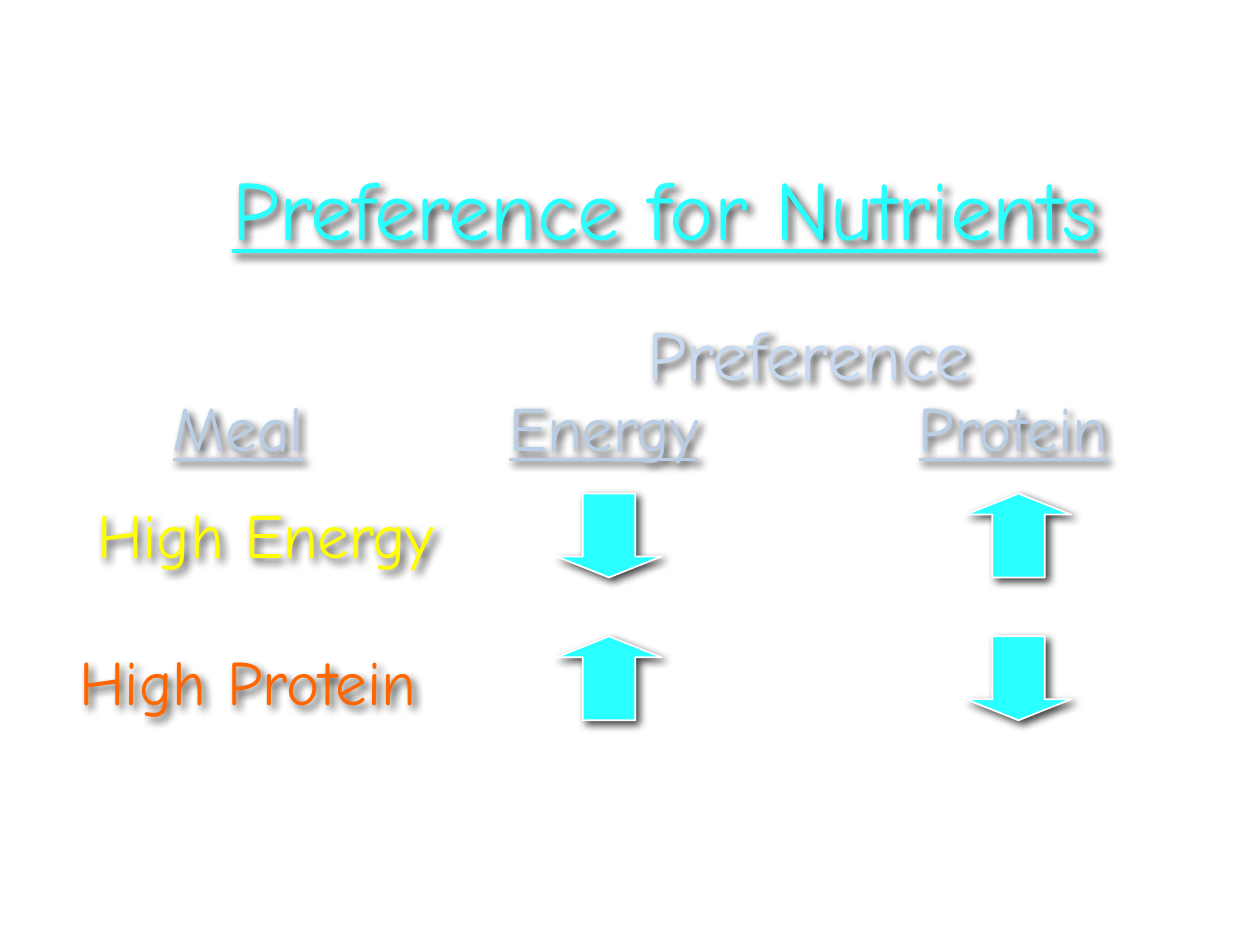
from lxml import etree
from pptx import Presentation
from pptx.dml.color import RGBColor
from pptx.enum.shapes import MSO_SHAPE
from pptx.enum.text import MSO_ANCHOR, MSO_AUTO_SIZE, PP_ALIGN
from pptx.oxml.ns import qn
from pptx.util import Emu, Pt

DOWN_ARROW = MSO_SHAPE.DOWN_ARROW
MIDDLE = MSO_ANCHOR.MIDDLE
FIT_SHAPE = MSO_AUTO_SIZE.SHAPE_TO_FIT_TEXT
NO_FIT = MSO_AUTO_SIZE.NONE
CENTER = PP_ALIGN.CENTER

SCALE = 7620
FONT = "Comic Neue"
COLORS = {
    "cyan": "29FFFF",
    "pale": "C6D9F1",
    "header": "B9CDE5",
    "yellow": "FFFF00",
    "orange": "FF6600",
    "white": "FFFFFF",
    "black": "000000",
}


def px(length):
    """Turn px (120 to the inch) into EMU."""
    return Emu(length * SCALE)


def color(name):
    """Return the named colour."""
    return RGBColor.from_string(COLORS[name])


def add_shadow(shape):
    """Give a shape a soft shadow to the lower right."""
    shape.shadow.inherit = False
    effects = shape._element.spPr.find(qn("a:effectLst"))
    shadow = etree.SubElement(
        effects, qn("a:outerShdw"), blurRad=str(Pt(5)), dist=str(Pt(3)),
        dir="2700000", algn="ctr", rotWithShape="0")
    black = etree.SubElement(shadow, qn("a:srgbClr"), val=COLORS["black"])
    etree.SubElement(black, qn("a:alpha"), val="75000")


def format_run(run, size, color_name, underline=False):
    """Set the font of one run."""
    run.font.name = FONT
    run.font.size = Pt(size)
    run.font.color.rgb = color(color_name)
    run.font.underline = underline


def place_title(slide, box):
    """Place the underlined slide title after a plain space."""
    title = slide.shapes.title
    title.left, title.top, title.width, title.height = map(px, box)
    title.fill.background()
    add_shadow(title)
    frame = title.text_frame
    frame.word_wrap = True
    frame.auto_size = NO_FIT
    frame.vertical_anchor = MIDDLE
    frame.text = " "
    paragraph = frame.paragraphs[0]
    paragraph.alignment = CENTER
    format_run(paragraph.runs[0], 44, "cyan")
    run = paragraph.add_run()
    run.text = "Preference for Nutrients"
    format_run(run, 48, "cyan", True)


def add_label(slide, box, text, size, color_name, underline=False):
    """Add a centred text label with a shadow."""
    label = slide.shapes.add_textbox(*map(px, box))
    add_shadow(label)
    frame = label.text_frame
    frame.word_wrap = True
    frame.auto_size = FIT_SHAPE
    frame.text = text
    paragraph = frame.paragraphs[0]
    paragraph.alignment = CENTER
    format_run(paragraph.runs[0], size, color_name, underline)


def add_arrow(slide, box, rises):
    """Add a block arrow that points up or down."""
    arrow = slide.shapes.add_shape(DOWN_ARROW, *map(px, box))
    arrow.adjustments[0] = 0.5
    arrow.adjustments[1] = 0.25
    arrow.rotation = 180 if rises else 0
    arrow.fill.solid()
    arrow.fill.fore_color.rgb = color("cyan")
    arrow.line.color.rgb = color("white")
    arrow.line.width = Pt(1)
    add_shadow(arrow)


def add_preference_grid(slide, box):
    """Add headings, meal labels and a grid of preference arrows."""
    left, top, width, height = box
    columns = [("Meal", 80), ("Energy", 428), ("Protein", 818)]
    rows = [
        ("High Energy", "yellow", 34, 180, (False, True)),
        ("High Protein", "orange", 0, 316, (True, False)),
    ]
    add_label(slide, (left + 508, top, 480, 92), "Preference", 40, "pale")
    for text, offset in columns:
        add_label(slide, (left + offset, top + 74, 250, 84), text, 36, "header", True)
    label_right = columns[1][1]
    for text, color_name, indent, offset, directions in rows:
        label_box = (left + indent, top + offset - 4 if indent else top + offset,
                     label_right - indent, 85)
        add_label(slide, label_box, text, 36, color_name)
        for (_, column), rises in zip(columns[1:], directions):
            add_arrow(slide, (left + column + 80, top + offset, 100, 80), rises)


def main():
    """Build and save the presentation."""
    presentation = Presentation()
    presentation.slide_width = px(1200)
    presentation.slide_height = px(900)
    slide = presentation.slides.add_slide(presentation.slide_layouts[5])
    place_title(slide, (121, 142, 1000, 110))
    add_preference_grid(slide, (22, 290, 1068, 401))
    presentation.save("out.pptx")


if __name__ == "__main__":
    main()
